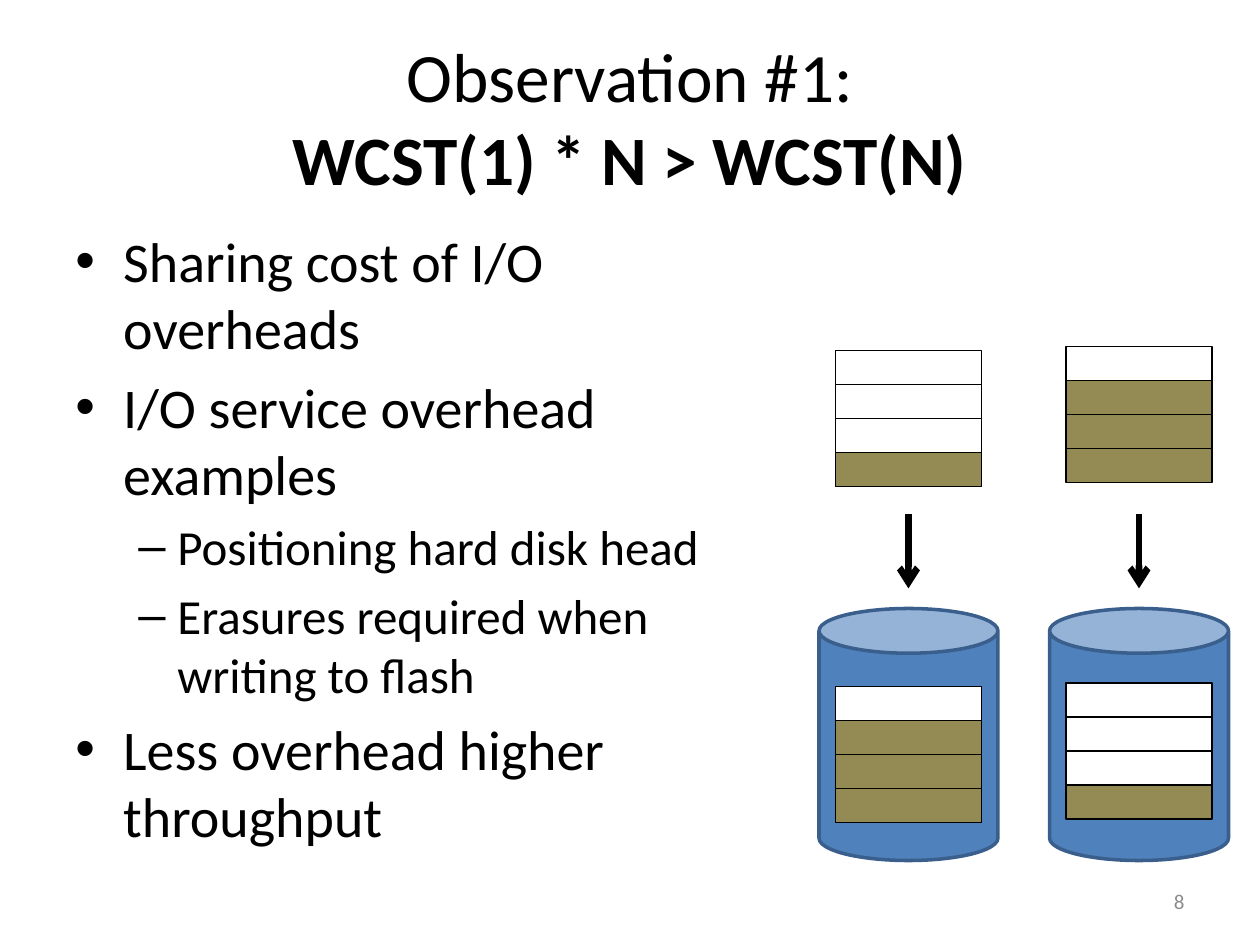
import pptx
import pptx.dml.color
import pptx.enum.shapes
import pptx.enum.text
import pptx.oxml
import pptx.oxml.ns
import pptx.util
from pptx.util import Inches

FONT = "Calibri"
BLACK, WHITE, OLIVE = "000000", "FFFFFF", "948A54"
BLUE, DARK_BLUE, GRAY = "4F81BD", "3A5F8C", "8C8C8C"
ALIGN = pptx.enum.text.PP_ALIGN
ANCHOR = pptx.enum.text.MSO_ANCHOR
SHAPE = pptx.enum.shapes.MSO_SHAPE

BLOCK_WIDTH, BLOCK_HEIGHT, BLOCK_COUNT = 1.16, 0.27, 4
CAN_WIDTH, CAN_HEIGHT, CAN_TOP = 1.42, 2, 4.83

# Level: (bullet, text indent in inches, hanging indent in inches, size)
LEVELS = [("•", 0.38, 0.38, 32), ("–", 0.81, 0.31, 28)]
BULLETS = [
    (0, "Sharing cost of I/O overheads"),
    (0, "I/O service overhead examples"),
    (1, "Positioning hard disk head"),
    (1, "Erasures required when writing to flash"),
    (0, "Less overhead higher throughput"),
]
# Disk: (center, top of queued blocks, filled, top of stored blocks, filled)
DISKS = [(7.21, 2.78, 1, 5.45, 3), (9.04, 2.75, 3, 5.42, 1)]


def rgb(color):
    return pptx.dml.color.RGBColor.from_string(color)


def add_text_box(slide, left, top, width, height, anchor=ANCHOR.TOP):
    box = slide.shapes.add_textbox(Inches(left), Inches(top), Inches(width), Inches(height))
    frame = box.text_frame
    frame.word_wrap = True
    frame.vertical_anchor = anchor
    return frame


def add_run(paragraph, text, size, color=BLACK, bold=False, align=ALIGN.LEFT):
    paragraph.alignment = align
    run = paragraph.add_run()
    run.text = text
    run.font.name = FONT
    run.font.size = pptx.util.Pt(size)
    run.font.bold = bold
    run.font.color.rgb = rgb(color)


def set_bullet(paragraph, character, indent, hanging):
    properties = paragraph._p.get_or_add_pPr()
    properties.set("marL", str(Inches(indent)))
    properties.set("indent", str(-Inches(hanging)))
    namespace = pptx.oxml.ns.nsdecls("a")
    for xml in (f'<a:buFont {namespace} typeface="Arial"/>',
                f'<a:buChar {namespace} char="{character}"/>'):
        properties.append(pptx.oxml.parse_xml(xml))


def add_title(slide):
    paragraph = add_text_box(slide, 0.5, 0.3, 9, 1.25, ANCHOR.MIDDLE).paragraphs[0]
    add_run(paragraph, "Observation #1:", 39.6, align=ALIGN.CENTER)
    paragraph.add_line_break()
    add_run(paragraph, "WCST(1) * N > WCST(N)", 39.6, bold=True, align=ALIGN.CENTER)


def add_bullets(slide):
    frame = add_text_box(slide, 0.5, 1.75, 5.67, 4.95)
    for index, (level, text) in enumerate(BULLETS):
        paragraph = frame.add_paragraph() if index else frame.paragraphs[0]
        character, indent, hanging, size = LEVELS[level]
        paragraph.level = level
        paragraph.space_before = pptx.util.Pt(size * 0.2)
        set_bullet(paragraph, character, indent, hanging)
        add_run(paragraph, text, size)


def add_shape(slide, kind, left, top, width, height, fill, line, weight):
    shape = slide.shapes.add_shape(
        kind, Inches(left), Inches(top), Inches(width), Inches(height))
    shape.shadow.inherit = False
    shape.fill.solid()
    shape.fill.fore_color.rgb = rgb(fill)
    shape.line.color.rgb = rgb(line)
    shape.line.width = pptx.util.Pt(weight)


def add_blocks(slide, center, top, filled):
    """Stack the blocks, with the lowest ones filled."""
    for row in range(BLOCK_COUNT):
        fill = OLIVE if row >= BLOCK_COUNT - filled else WHITE
        add_shape(slide, SHAPE.RECTANGLE, center - BLOCK_WIDTH / 2, top + row * BLOCK_HEIGHT,
                  BLOCK_WIDTH, BLOCK_HEIGHT, fill, BLACK, 0.75)


def add_down_arrow(slide, center, top, bottom):
    arrow = slide.shapes.add_connector(
        pptx.enum.shapes.MSO_CONNECTOR.STRAIGHT,
        Inches(center), Inches(top), Inches(center), Inches(bottom))
    arrow.line.color.rgb = rgb(BLACK)
    arrow.line.width = pptx.util.Pt(3.75)
    namespace = pptx.oxml.ns.nsdecls("a")
    arrow.line._get_or_add_ln().append(
        pptx.oxml.parse_xml(f'<a:tailEnd {namespace} type="arrow"/>'))
    arrow._element.spPr.append(pptx.oxml.parse_xml(f"<a:effectLst {namespace}/>"))


def add_disk(slide, center, queue_top, queue_filled, stored_top, stored_filled):
    add_shape(slide, SHAPE.CAN, center - CAN_WIDTH / 2, CAN_TOP, CAN_WIDTH, CAN_HEIGHT,
              BLUE, DARK_BLUE, 2)
    add_blocks(slide, center, stored_top, stored_filled)
    add_down_arrow(slide, center, 4.08, 4.67)
    add_blocks(slide, center, queue_top, queue_filled)


def main():
    presentation = pptx.Presentation()
    presentation.slide_width = Inches(10)
    presentation.slide_height = Inches(7.5)
    slide = presentation.slides.add_slide(presentation.slide_layouts[6])
    add_title(slide)
    add_bullets(slide)
    number = add_text_box(slide, 7.17, 6.95, 2.33, 0.4, ANCHOR.MIDDLE)
    add_run(number.paragraphs[0], "8", 12, GRAY, align=ALIGN.RIGHT)
    for disk in DISKS:
        add_disk(slide, *disk)
    presentation.save("out.pptx")


if __name__ == "__main__":
    main()
